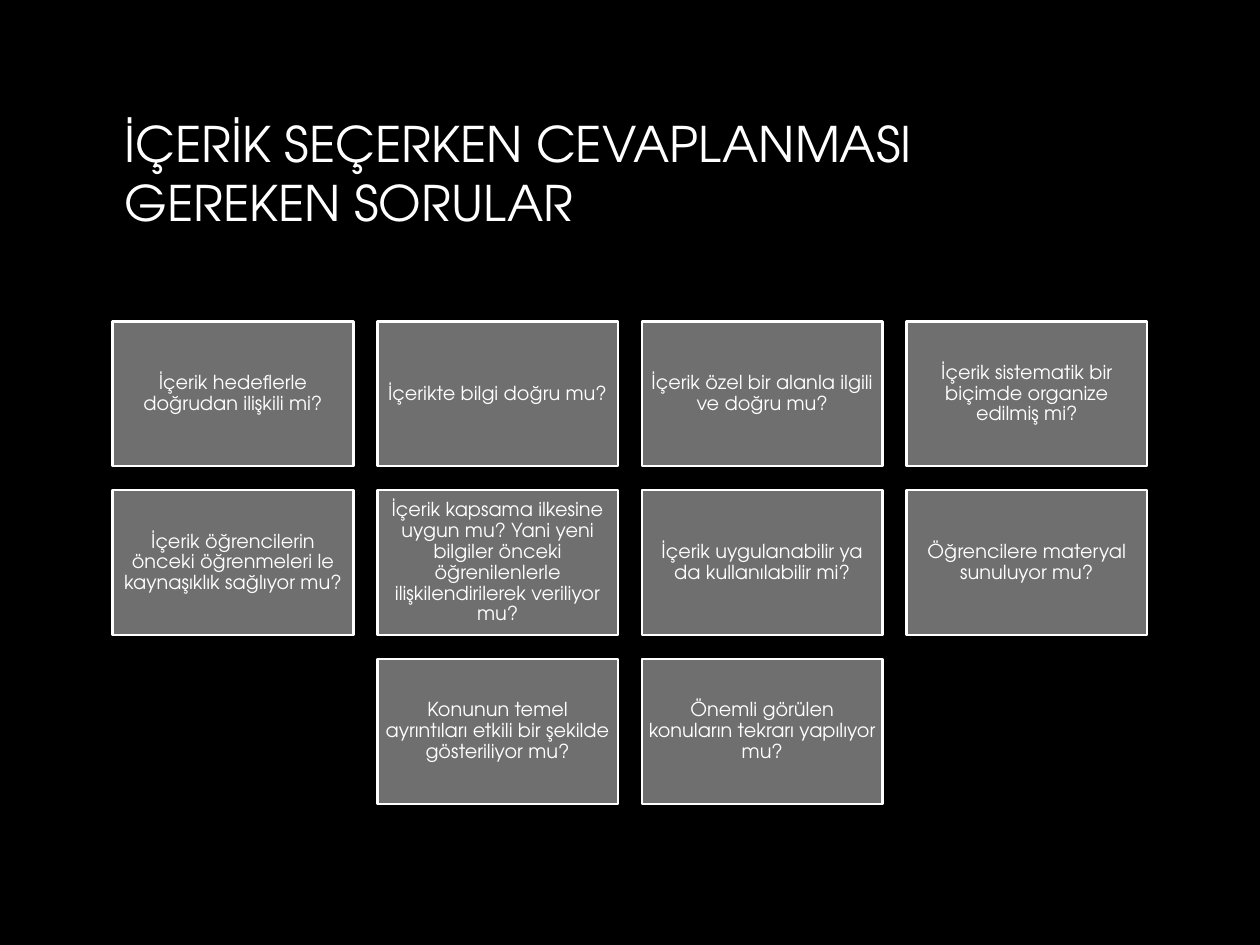
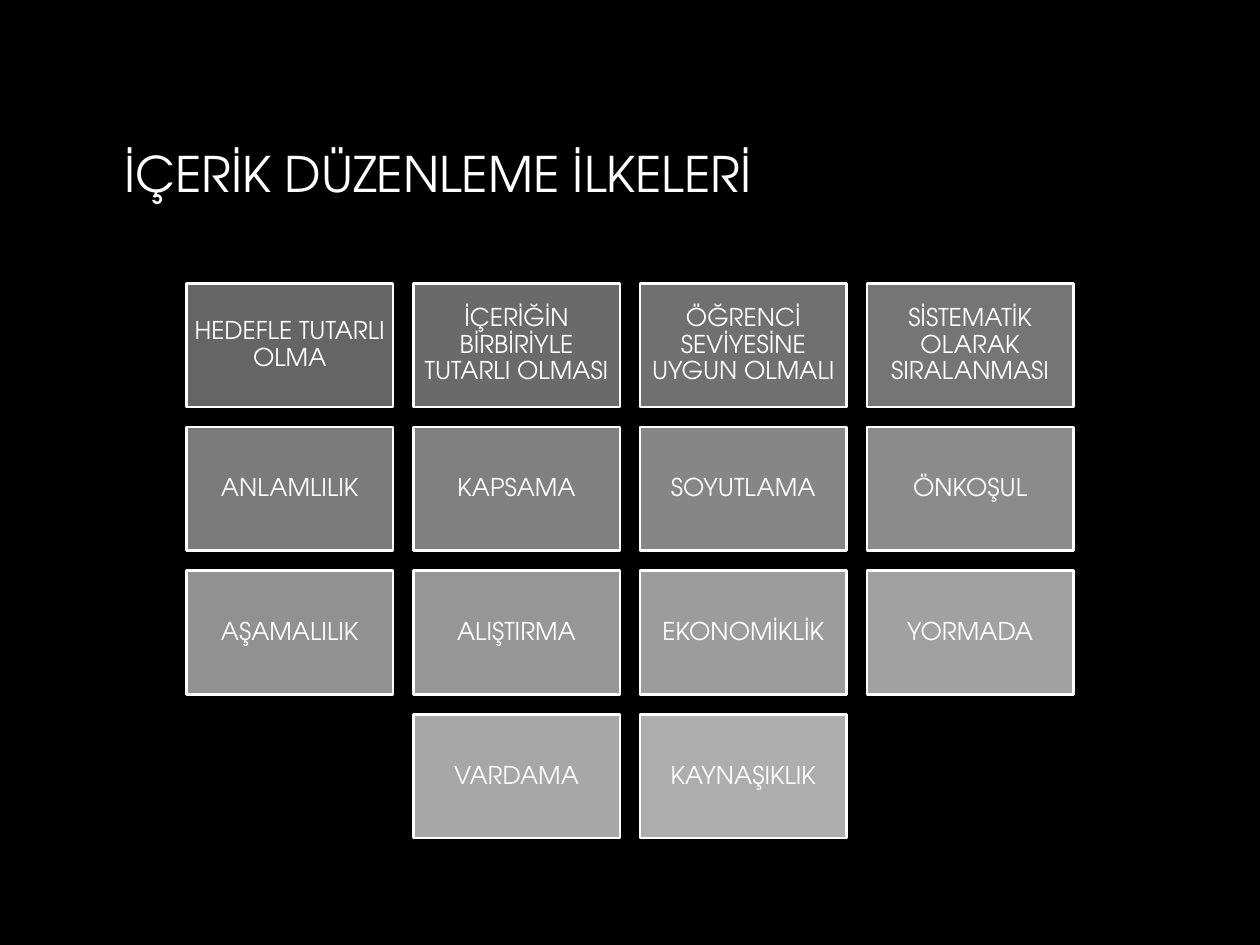
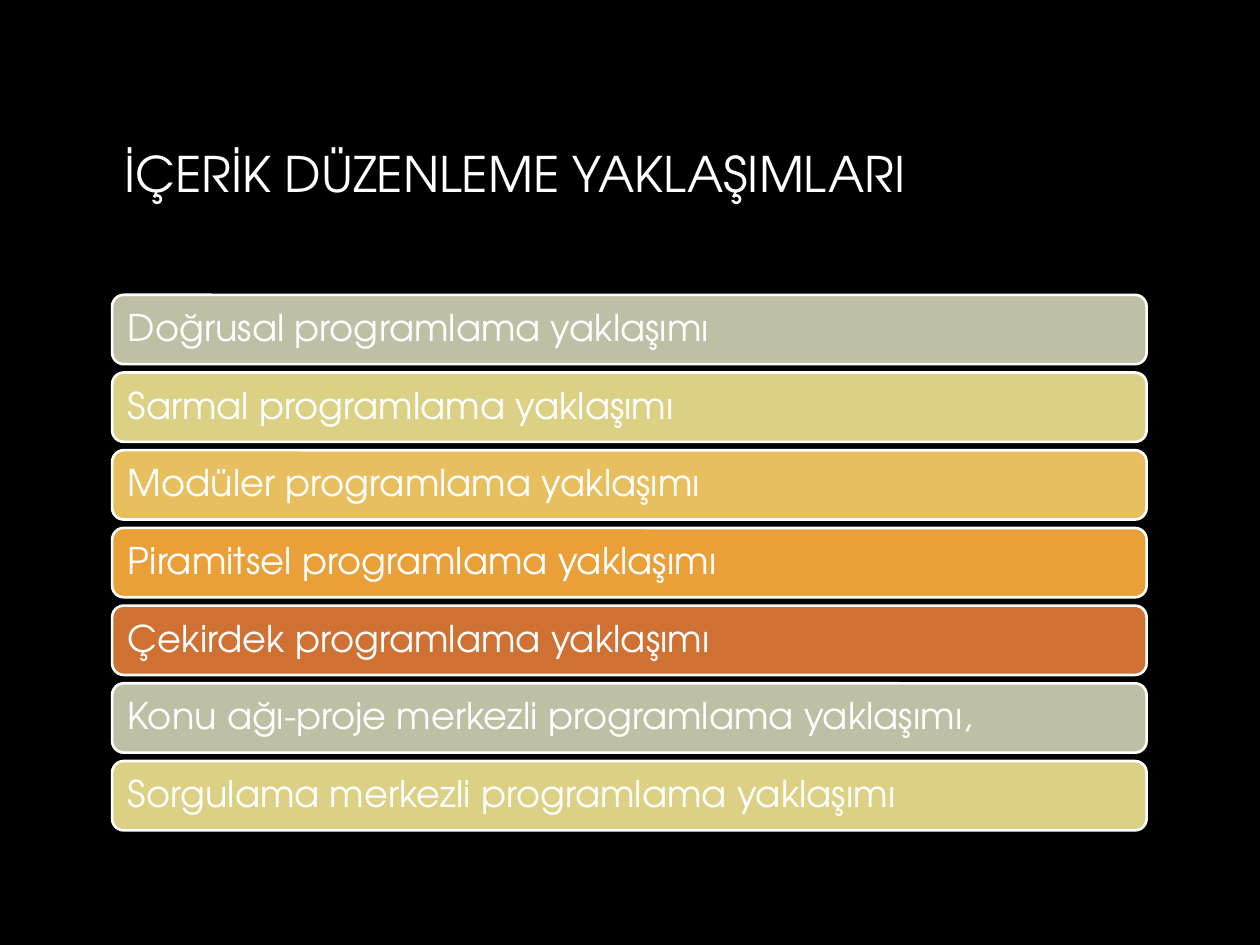
from dataclasses import dataclass

from pptx import Presentation
from pptx.dml.color import RGBColor
from pptx.enum.shapes import MSO_SHAPE
from pptx.enum.text import MSO_ANCHOR, PP_ALIGN
from pptx.util import Inches, Pt

RECT, ROUNDED = MSO_SHAPE.RECTANGLE, MSO_SHAPE.ROUNDED_RECTANGLE
LEFT, CENTER = PP_ALIGN.LEFT, PP_ALIGN.CENTER
MIDDLE = MSO_ANCHOR.MIDDLE


@dataclass(frozen=True)
class Theme:
    font: str = "TeX Gyre Adventor"
    background: str = "000000"
    text: str = "FFFFFF"
    line: str = "FFFFFF"
    line_width: float = 1.5
    question_fill: str = "6F6F6F"
    bar_fills: tuple = ("BFBFA5", "DCD084", "E7BF5F", "E9A039", "CF7133")
    title_size: int = 28
    question_size: int = 11
    principle_size: int = 14
    bar_size: int = 21


theme = Theme()


def write(sp, text, size, align=LEFT, inset=(0.1, 0.05), spacing=1.0):
    tf = sp.text_frame
    tf.word_wrap = True
    tf.vertical_anchor = MIDDLE
    tf.margin_left = tf.margin_right = Inches(inset[0])
    tf.margin_top = tf.margin_bottom = Inches(inset[1])
    p = tf.paragraphs[0]
    p.alignment = align
    p.line_spacing = spacing
    r = p.add_run()
    r.text = text
    r.font.name = theme.font
    r.font.size = Pt(size)
    r.font.color.rgb = RGBColor.from_string(theme.text)


def add_box(s, kind, x, y, w, h, fill, text, **text_format):
    sp = s.shapes.add_shape(kind, Inches(x), Inches(y), Inches(w), Inches(h))
    sp.shadow.inherit = False
    sp.fill.solid()
    sp.fill.fore_color.rgb = RGBColor.from_string(fill)
    sp.line.color.rgb = RGBColor.from_string(theme.line)
    sp.line.width = Pt(theme.line_width)
    write(sp, text, spacing=0.9, **text_format)


prs = Presentation()
prs.slide_width, prs.slide_height = Inches(10), Inches(7.5)

# Shared background
bg = prs.slide_master.background.fill
bg.solid()
bg.fore_color.rgb = RGBColor.from_string(theme.background)

# Content
questions = [
    "İçerik hedeflerle doğrudan ilişkili mi?",
    "İçerikte bilgi doğru mu?",
    "İçerik özel bir alanla ilgili ve doğru mu?",
    "İçerik sistematik bir biçimde organize edilmiş mi?",
    "İçerik öğrencilerin önceki öğrenmeleri le kaynaşıklık sağlıyor mu?",
    "İçerik kapsama ilkesine uygun mu? Yani yeni bilgiler önceki "
    "öğrenilenlerle ilişkilendirilerek veriliyor mu?",
    "İçerik uygulanabilir ya da kullanılabilir mi?",
    "Öğrencilere materyal sunuluyor mu?",
    "Konunun temel ayrıntıları etkili bir şekilde gösteriliyor mu?",
    "Önemli görülen konuların tekrarı yapılıyor mu?",
]
principles = [
    "HEDEFLE TUTARLI OLMA",
    "İÇERİĞİN BİRBİRİYLE TUTARLI OLMASI",
    "ÖĞRENCİ SEVİYESİNE UYGUN OLMALI",
    "SİSTEMATİK OLARAK SIRALANMASI",
    "ANLAMLILIK", "KAPSAMA", "SOYUTLAMA", "ÖNKOŞUL",
    "AŞAMALILIK", "ALIŞTIRMA", "EKONOMİKLİK", "YORMADA",
    "VARDAMA", "KAYNAŞIKLIK",
]
approaches = [
    "Doğrusal programlama yaklaşımı",
    "Sarmal programlama yaklaşımı",
    "Modüler programlama yaklaşımı",
    "Piramitsel programlama yaklaşımı",
    "Çekirdek programlama yaklaşımı",
    "Konu ağı-proje merkezli programlama yaklaşımı,",
    "Sorgulama merkezli programlama yaklaşımı",
]

# Slides with their titles
slides = []
for title in ("İÇERİK SEÇERKEN CEVAPLANMASI GEREKEN SORULAR",
              "İÇERİK DÜZENLEME İLKELERİ",
              "İÇERİK DÜZENLEME YAKLAŞIMLARI"):
    s = prs.slides.add_slide(prs.slide_layouts[6])
    sp = s.shapes.add_textbox(Inches(0.89), Inches(0.65), Inches(8.21), Inches(1.44))
    write(sp, title, theme.title_size)
    slides.append(s)

# Box grids: four to a row, each row centred on the slide
question_fills = [theme.question_fill] * len(questions)
last = len(principles) - 1
principle_fills = [f"{101 + 72 * i // last:02X}" * 3 for i in range(last + 1)]
columns = 4
grids = [
    (slides[0], questions, question_fills, 2.55, 1.91, 1.15, 0.19, theme.question_size, 0.05),
    (slides[1], principles, principle_fills, 2.25, 1.64, 0.98, 0.16, theme.principle_size, 0.06),
]
for s, texts, fills, top, w, h, gap, size, inset in grids:
    for i, (text, fill) in enumerate(zip(texts, fills)):
        row, col = divmod(i, columns)
        in_row = min(columns, len(texts) - row * columns)
        left = (10 - in_row * w - (in_row - 1) * gap) / 2
        add_box(s, RECT, left + col * (w + gap), top + row * (h + gap), w, h, fill, text,
                size=size, align=CENTER, inset=(inset, inset))

# Approach bars
bar_pitch = 3.7 / (len(approaches) - 1)
for i, text in enumerate(approaches):
    fill = theme.bar_fills[i % len(theme.bar_fills)]
    add_box(slides[2], ROUNDED, 0.89, 2.34 + i * bar_pitch, 8.21, 0.55, fill, text,
            size=theme.bar_size, inset=(0.1, 0.09))

prs.save("out.pptx")
